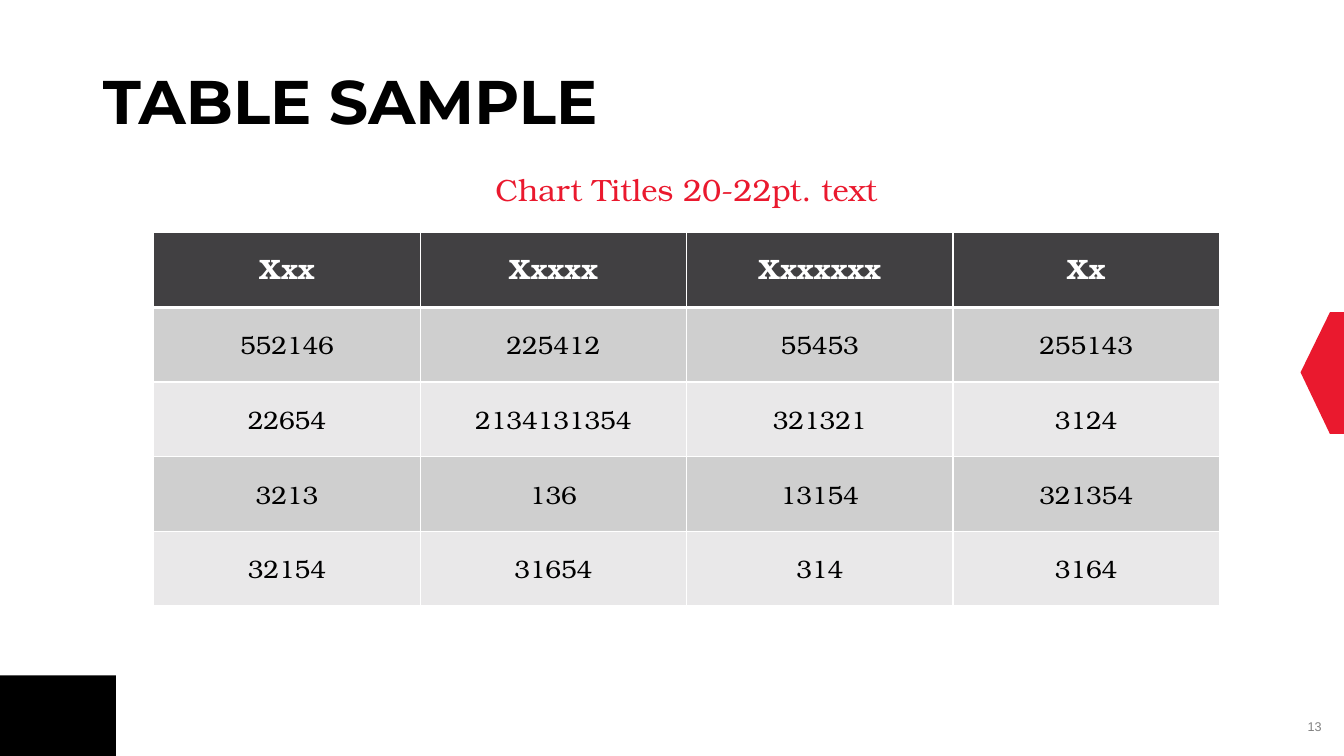
from lxml import etree
from pptx import Presentation
from pptx.dml.color import RGBColor
from pptx.enum.shapes import MSO_SHAPE
from pptx.enum.text import MSO_ANCHOR, MSO_AUTO_SIZE, PP_ALIGN
from pptx.oxml.ns import qn
from pptx.util import Pt

LEFT, CENTER, RIGHT = PP_ALIGN.LEFT, PP_ALIGN.CENTER, PP_ALIGN.RIGHT
TOP, MIDDLE = MSO_ANCHOR.TOP, MSO_ANCHOR.MIDDLE
NO_AUTOFIT = MSO_AUTO_SIZE.NONE
RECTANGLE = MSO_SHAPE.RECTANGLE

BLACK = RGBColor(0x00, 0x00, 0x00)
WHITE = RGBColor(0xFF, 0xFF, 0xFF)
RED = RGBColor(0xEA, 0x19, 0x2E)
GREY = RGBColor(0x80, 0x80, 0x80)
CHARCOAL = RGBColor(0x41, 0x40, 0x42)
BANDS = (RGBColor(0xCF, 0xCF, 0xCF), RGBColor(0xE9, 0xE8, 0xE9))
SERIF = "TeX Gyre Bonum"

# Content
HEADING = "TABLE SAMPLE"
TABLE_TITLE = "Chart Titles 20-22pt. text"
PAGE_NUMBER = "13"
ROWS = [
    ("Xxx", "Xxxxx", "Xxxxxxx", "Xx"),
    ("552146", "225412", "55453", "255143"),
    ("22654", "2134131354", "321321", "3124"),
    ("3213", "136", "13154", "321354"),
    ("32154", "31654", "314", "3164"),
]

# Text formats
HEADING_FONT = {"name": "Montserrat", "size": Pt(44), "bold": True}
TABLE_TITLE_FONT = {"name": SERIF, "size": Pt(22), "bold": False}
HEADER_FONT = {"name": SERIF, "size": Pt(20), "bold": True}
VALUE_FONT = {"name": SERIF, "size": Pt(18), "bold": False}
PAGE_FONT = {"name": "Arial", "size": Pt(9), "bold": False}

# Layout in points
SLIDE_W, SLIDE_H = 960, 540
HEADING_BOX = (66.24, 23.76, 848.88, 104.4)
TABLE_TITLE_BOX = (285.84, 120.24, 408.96, 39.6)
PAGE_BOX = (904.32, 509.76, 46.8, 18)
CORNER_BOX = (0, 482.4, 82.8, 57.6)
TABLE_LEFT, TABLE_TOP = 109.8, 166.3
COLUMN_W, ROW_H = 190.3, 53.3
TAB_POINTS = [(950.4, 223.2), (960, 223.2), (960, 309.6),
              (950.4, 309.6), (928.8, 266.4)]


def points(box):
    return [Pt(value) for value in box]


def place(shape, box):
    shape.left, shape.top, shape.width, shape.height = points(box)


def write(frame, text, font, color, align, spacing=1.0):
    paragraph = frame.paragraphs[0]
    paragraph.alignment = align
    paragraph.line_spacing = spacing
    paragraph.space_before = Pt(0)
    run = paragraph.add_run()
    run.text = text
    for attribute, value in font.items():
        setattr(run.font, attribute, value)
    run.font.color.rgb = color


def paint(shape, color):
    shape.shadow.inherit = False
    shape.fill.solid()
    shape.fill.fore_color.rgb = color
    shape.line.fill.background()


def add_borders(cell, widths):
    """Put white borders before the cell's fill, as the schema requires."""
    properties = cell._tc.get_or_add_tcPr()
    for index, (side, width) in enumerate(widths.items()):
        border = etree.Element(qn(f"a:{side}"), w=str(Pt(width)))
        fill = etree.SubElement(border, qn("a:solidFill"))
        etree.SubElement(fill, qn("a:srgbClr"), val=str(WHITE))
        properties.insert(index, border)


prs = Presentation()
prs.slide_width, prs.slide_height = Pt(SLIDE_W), Pt(SLIDE_H)
slide = prs.slides.add_slide(prs.slide_layouts[1])
shapes = slide.shapes

# Red tab at the right edge
outline = shapes.build_freeform(*TAB_POINTS[0], scale=Pt(1))
outline.add_line_segments(TAB_POINTS[1:], close=True)
paint(outline.convert_to_shape(), RED)

# Black corner block
paint(shapes.add_shape(RECTANGLE, *points(CORNER_BOX)), BLACK)

# Page number
page_number = shapes.add_textbox(*points(PAGE_BOX))
page_number.text_frame.word_wrap = True
write(page_number.text_frame, PAGE_NUMBER, PAGE_FONT, GREY, RIGHT)

# Heading and table title
heading, table_title = shapes.title, slide.placeholders[1]
for holder, box, anchor in ((heading, HEADING_BOX, MIDDLE),
                            (table_title, TABLE_TITLE_BOX, TOP)):
    place(holder, box)
    holder.text_frame.auto_size = NO_AUTOFIT
    holder.text_frame.vertical_anchor = anchor
write(heading.text_frame, HEADING, HEADING_FONT, BLACK, LEFT, 0.8)
title_properties = table_title.text_frame.paragraphs[0]._p.get_or_add_pPr()
title_properties.set("marL", "0")
title_properties.set("indent", "0")
etree.SubElement(title_properties, qn("a:buNone"))
write(table_title.text_frame, TABLE_TITLE, TABLE_TITLE_FONT, RED, CENTER, 0.95)

# Table
row_count, column_count = len(ROWS), len(ROWS[0])
table = shapes.add_table(
    row_count, column_count, Pt(TABLE_LEFT), Pt(TABLE_TOP),
    Pt(COLUMN_W * column_count), Pt(ROW_H * row_count)).table
for column in table.columns:
    column.width = Pt(COLUMN_W)
for row in table.rows:
    row.height = Pt(ROW_H)

for row_index, values in enumerate(ROWS):
    is_header = row_index == 0
    for column_index, value in enumerate(values):
        cell = table.cell(row_index, column_index)
        cell.vertical_anchor = MIDDLE
        for side in ("left", "top", "right", "bottom"):
            setattr(cell, f"margin_{side}", 0)
        cell.fill.solid()
        cell.fill.fore_color.rgb = CHARCOAL if is_header else BANDS[(row_index - 1) % 2]
        add_borders(cell, {"lnL": 1, "lnR": 1, "lnT": 3 if row_index == 1 else 1,
                           "lnB": 3 if is_header else 1})
        if is_header:
            write(cell.text_frame, value, HEADER_FONT, WHITE, CENTER, 0.8)
        else:
            write(cell.text_frame, value, VALUE_FONT, BLACK, CENTER)

prs.save("out.pptx")
